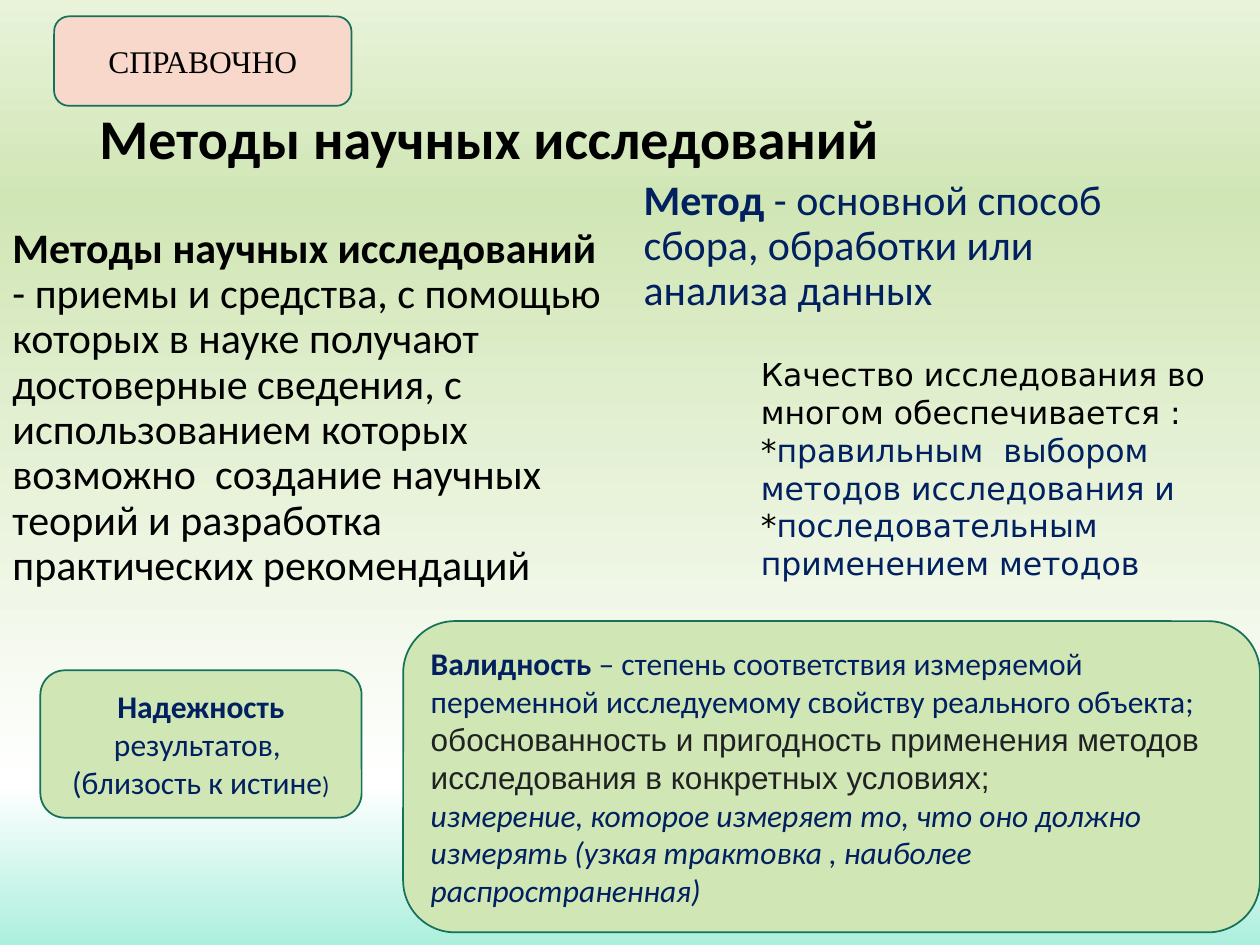
from pptx import Presentation
from pptx.dml.color import RGBColor
from pptx.enum.shapes import MSO_SHAPE as SHAPE
from pptx.enum.text import MSO_ANCHOR as ANCHOR, PP_ALIGN as ALIGN
from pptx.oxml import parse_xml
from pptx.oxml.ns import nsdecls, qn
from pptx.util import Inches, Pt

BLACK, NAVY, GREY = "000000", "002060", "202122"
GREEN, PINK, BORDER = "D1E6B5", "F8D8CA", "157259"
SKY = [(0, "E8F3DA"), (21, "D1E6B5"), (83, "FFFFFF"), (100, "ACEFDD")]


def rgb(value):
    return RGBColor.from_string(value)


def set_background(s, stops):
    """Fill the slide from top to bottom with (percent, colour) stops."""
    fill = s.background.fill
    fill.gradient()
    fill.gradient_angle = 270
    gs_list = next(s.element.iter(qn("a:gsLst")))
    for gs in list(gs_list):
        gs_list.remove(gs)
    for percent, color in stops:
        gs_list.append(parse_xml(
            f'<a:gs {nsdecls("a")} pos="{percent * 1000}">'
            f'<a:srgbClr val="{color}"/></a:gs>'))


def add_runs(p, runs, name, size, color):
    """Add (text, format) runs; a format overrides the shared font values."""
    for text, fmt in runs:
        r = p.add_run()
        r.text = text
        values = {"name": name, "size": size, "color": color, **fmt}
        r.font.color.rgb = rgb(values.pop("color"))
        values["size"] = Pt(values["size"])
        for key, value in values.items():
            setattr(r.font, key, value)


def write(sp, paragraphs, name="Calibri", size=18, color=BLACK,
          anchor=ANCHOR.TOP, tail=0, **layout):
    """Fill sp with paragraphs; tail is the space in points below the last."""
    tf = sp.text_frame
    tf.word_wrap = True
    tf.vertical_anchor = anchor
    for i, runs in enumerate(paragraphs):
        p = tf.add_paragraph() if i else tf.paragraphs[0]
        for key, value in {"alignment": ALIGN.LEFT, **layout}.items():
            setattr(p, key, value)
        add_runs(p, runs, name, size, color)
    if tail:
        p.space_after = Pt(tail)


def add_text(s, box, paragraphs, **style):
    write(s.shapes.add_textbox(*map(Inches, box)), paragraphs, **style)


def add_card(s, box, fill, paragraphs, **style):
    sp = s.shapes.add_shape(SHAPE.ROUNDED_RECTANGLE, *map(Inches, box))
    sp.shadow.inherit = False
    sp.fill.solid()
    sp.fill.fore_color.rgb = rgb(fill)
    sp.line.color.rgb = rgb(BORDER)
    sp.line.width = Pt(1)
    write(sp, paragraphs, anchor=ANCHOR.MIDDLE, **style)


def main():
    prs = Presentation()
    prs.slide_width, prs.slide_height = Inches(10), Inches(7.5)
    s = prs.slides.add_slide(prs.slide_layouts[6])
    set_background(s, SKY)
    bold, navy = {"bold": True}, {"color": NAVY}
    body = {"size": 24, "line_spacing": 0.9, "space_before": Pt(10)}

    add_text(s, (0.69, 0.4, 8.62, 1.45),
             [[("Методы научных исследований", bold)]],
             size=32, anchor=ANCHOR.MIDDLE, line_spacing=0.9)
    add_text(s, (0, 1.75, 4.92, 4.95), [[
        ("Методы научных исследований ", bold),
        ("- приемы и средства, с помощью которых в науке получают "
         "достоверные сведения, с использованием которых возможно  создание "
         "научных теорий и разработка практических рекомендаций", {})]],
        **body)
    add_text(s, (5.01, 1.37, 4.25, 4.76), [[
        ("Метод", bold),
        (" - основной способ сбора, обработки или анализа данных", {})]],
        color=NAVY, **body)
    add_text(s, (5.94, 2.77, 3.92, 3.13), [
        [("Качество исследования во многом обеспечивается : *", {}),
         ("правильным  выбором методов исследования и", navy)],
        [("*", {}), ("последовательным применением методов", navy)]],
        name="DejaVu Sans")

    add_card(s, (3.2, 4.93, 6.8, 2.47), GREEN, [
        [("Валидность ", bold),
         ("– степень соответствия измеряемой переменной исследуемому "
          "свойству реального объекта;", {})],
        [("обоснованность и пригодность применения методов  исследования в "
          "конкретных условиях;", {"name": "Arial", "color": GREY})],
        [("измерение, которое измеряет то, что оно должно измерять (узкая "
          "трактовка , наиболее распространенная)", {"italic": True})]],
        color=NAVY, tail=22)
    add_card(s, (0.32, 5.32, 2.55, 1.17), GREEN, [[
        ("Надежность ", bold),
        ("результатов,  (близость к истине", {}),
        (")", {"size": 14})]],
        color=NAVY, tail=22, alignment=ALIGN.CENTER)
    add_card(s, (0.43, 0.13, 2.36, 0.71), PINK, [[("СПРАВОЧНО", {})]],
             name="Times New Roman", alignment=ALIGN.CENTER)
    prs.save("out.pptx")


if __name__ == "__main__":
    main()
